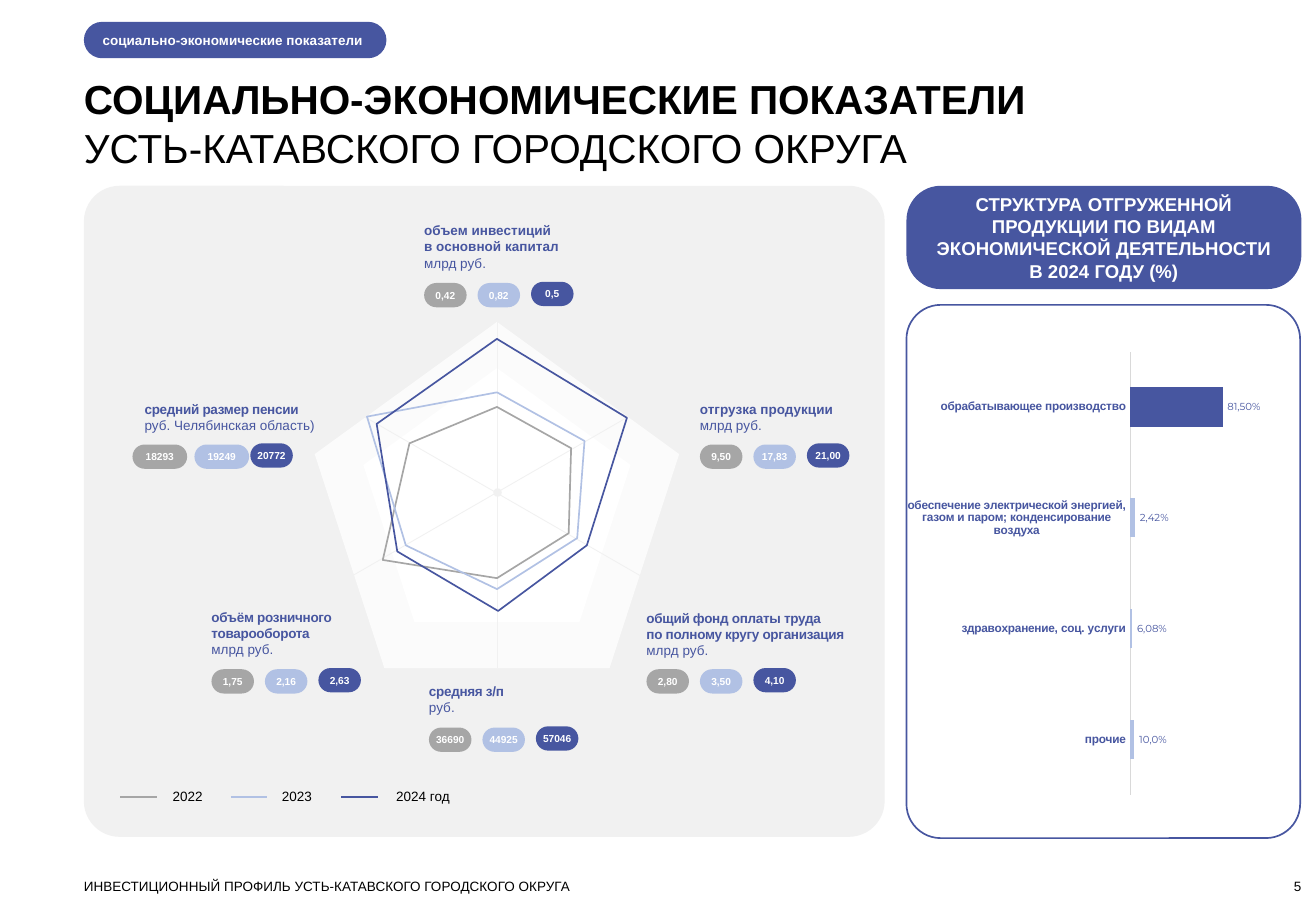
import pptx
import pptx.chart.data
import pptx.dml.color
import pptx.enum.chart
import pptx.enum.shapes
import pptx.enum.text
import pptx.oxml
import pptx.oxml.ns
import pptx.util

Inches = pptx.util.Inches
Pt = pptx.util.Pt
color = pptx.dml.color.RGBColor.from_string
Shapes = pptx.enum.shapes.MSO_SHAPE
Align = pptx.enum.text.PP_ALIGN
Anchor = pptx.enum.text.MSO_ANCHOR
qn = pptx.oxml.ns.qn

BLUE, LIGHT_BLUE, GRAY, PALE = "4756A0", "B1C1E4", "A6A6A6", "F1F1F1"
WHITE, BLACK = "FFFFFF", "000000"
YEAR_COLORS = (GRAY, LIGHT_BLUE, BLUE)

presentation = pptx.Presentation()
presentation.slide_width = Inches(10.83)
presentation.slide_height = Inches(7.5)
slide = presentation.slides.add_slide(presentation.slide_layouts[6])


def write_text(lines, size, hex_color, box=None, shape=None, align=Align.LEFT,
               anchor=Anchor.TOP, left_inset=0, tracking=0):
    """Write (text, bold) lines into a shape, or into a new text box at box."""
    if shape is None:
        shape = slide.shapes.add_textbox(*map(Inches, box))
    frame = shape.text_frame
    frame.word_wrap = True
    frame.vertical_anchor = anchor
    frame.margin_left = Inches(left_inset)
    frame.margin_right = frame.margin_top = frame.margin_bottom = 0
    for index, (text, bold) in enumerate(lines):
        paragraph = frame.add_paragraph() if index else frame.paragraphs[0]
        paragraph.alignment = align
        run = paragraph.add_run()
        run.text = text
        run.font.name = "Arial"
        run.font.size = Pt(size)
        run.font.bold = bold
        run.font.color.rgb = color(hex_color)
        if bold and tracking:
            run.font._element.set("spc", str(tracking))


def add_shape(kind, box, fill=None, line=None, corner=None):
    shape = slide.shapes.add_shape(kind, *map(Inches, box))
    shape.shadow.inherit = False
    if corner is not None:
        shape.adjustments[0] = corner
    if fill:
        shape.fill.solid()
        shape.fill.fore_color.rgb = color(fill)
    else:
        shape.fill.background()
    if line:
        shape.line.color.rgb = color(line)
        shape.line.width = Pt(1)
    else:
        shape.line.fill.background()
    return shape


# Header, title and footer
section_tag = add_shape(Shapes.ROUNDED_RECTANGLE, (0.69, 0.18, 2.49, 0.3), BLUE, corner=0.5)
write_text([("социально-экономические показатели", True)], 8, WHITE, shape=section_tag,
           anchor=Anchor.MIDDLE, left_inset=0.11)
write_text([("СОЦИАЛЬНО-ЭКОНОМИЧЕСКИЕ ПОКАЗАТЕЛИ", True),
            ("УСТЬ-КАТАВСКОГО ГОРОДСКОГО ОКРУГА", False)], 24, BLACK, (0.69, 0.61, 9.65, 0.81))
write_text([("ИНВЕСТИЦИОННЫЙ ПРОФИЛЬ УСТЬ-КАТАВСКОГО ГОРОДСКОГО ОКРУГА", False)],
           8, BLACK, (0.69, 7.23, 8, 0.13))
write_text([("5", False)], 8, BLACK, (9.91, 7.23, 0.8, 0.13),
           align=Align.RIGHT, anchor=Anchor.BOTTOM)

# Panels
add_shape(Shapes.ROUNDED_RECTANGLE, (0.69, 1.53, 6.59, 5.36), PALE, corner=0.055)
chart_title = add_shape(Shapes.ROUNDED_RECTANGLE, (7.46, 1.53, 3.25, 0.85), BLUE, corner=0.331)
title_lines = ("СТРУКТУРА ОТГРУЖЕННОЙ", "ПРОДУКЦИИ ПО ВИДАМ",
               "ЭКОНОМИЧЕСКОЙ ДЕЯТЕЛЬНОСТИ", "В 2024 ГОДУ (%)")
write_text([(text, True) for text in title_lines], 11, WHITE, shape=chart_title,
           align=Align.CENTER, anchor=Anchor.MIDDLE)
add_shape(Shapes.ROUNDED_RECTANGLE, (7.46, 2.51, 3.24, 4.39), line=BLUE, corner=0.087)

# Bar chart
chart_data = pptx.chart.data.CategoryChartData(number_format="0.00%")
chart_data.categories = [
    "прочие", "здравохранение, соц. услуги",
    "обеспечение электрической энергией, газом и паром; конденсирование воздуха",
    "обрабатывающее производство"]
chart_data.add_series("Series 1", (0.039, 0.018, 0.046, 0.897))
chart = slide.shapes.add_chart(
    pptx.enum.chart.XL_CHART_TYPE.BAR_CLUSTERED,
    Inches(7.46), Inches(2.5), Inches(3.24), Inches(4.4), chart_data).chart
chart.has_legend = False
chart.has_title = False
chart.font.name = "Calibri"
chart.font.size = Pt(10)
chart.font.color.rgb = color(BLACK)
value_axis = chart.value_axis
value_axis.minimum_scale, value_axis.maximum_scale = 0, 1
value_axis.has_major_gridlines = False
value_axis.visible = False
category_axis = chart.category_axis
category_axis.major_tick_mark = pptx.enum.chart.XL_TICK_MARK.NONE
category_axis.format.line.color.rgb = color("D9D9D9")
category_axis.format.line.width = Pt(0.75)
category_font = category_axis.tick_labels.font
category_font.name, category_font.size, category_font.bold = "Arial", Pt(7), True
category_font.color.rgb = color(BLUE)

plot = chart.plots[0]
plot.gap_width = 182
plot.vary_by_categories = False
series = plot.series[0]
series.format.fill.solid()
series.format.fill.fore_color.rgb = color(LIGHT_BLUE)
labels = series.data_labels
labels.show_value = True
labels.number_format = "0.00%"
labels.number_format_is_linked = False
labels.position = pptx.enum.chart.XL_LABEL_POSITION.OUTSIDE_END
labels.font.name, labels.font.size, labels.font.bold = "Montserrat", Pt(6), True
labels.font.color.rgb = color(BLUE)
for index, text in enumerate(("10,0%", "6,08%", "2,42%", "81,50%")):
    label = series.points[index].data_label
    run = label.text_frame.paragraphs[0].add_run()
    run.text = text
    run.font.name, run.font.size, run.font.bold = "Montserrat", Pt(6), False
    run.font.color.rgb = color(BLUE)
    label.position = pptx.enum.chart.XL_LABEL_POSITION.OUTSIDE_END
main_bar = series.points[3].format.fill
main_bar.solid()
main_bar.fore_color.rgb = color(BLUE)

plot_area = chart._chartSpace.chart.plotArea
for layout in plot_area.findall(qn("c:layout")):
    plot_area.remove(layout)
plot_area.insert(0, pptx.oxml.parse_xml(
    '<c:layout xmlns:c="http://schemas.openxmlformats.org/drawingml/2006/chart">'
    '<c:manualLayout><c:layoutTarget val="inner"/><c:xMode val="edge"/><c:yMode val="edge"/>'
    '<c:x val="0.569"/><c:y val="0.09"/><c:w val="0.261"/><c:h val="0.829"/>'
    '</c:manualLayout></c:layout>'))

# Radar background, spokes and legend
add_shape(Shapes.REGULAR_PENTAGON, (2.59, 2.65, 3, 2.85), "FBFBFB")
add_shape(Shapes.REGULAR_PENTAGON, (2.99, 3.03, 2.2, 2.09), WHITE)
lines = [((4.09, 2.65, 4.09, 5.5), PALE, 0.5),
         ((5.19, 3.42, 2.9, 4.74), PALE, 0.5),
         ((2.98, 3.42, 5.27, 4.74), PALE, 0.5)]
legend = (("2022", 0.99, 1.42), ("2023", 1.9, 2.32), ("2024 год", 2.81, 3.26))
for (year, line_left, text_left), year_color in zip(legend, YEAR_COLORS):
    lines.append(((line_left, 6.56, line_left + 0.3, 6.56), year_color, 1))
    write_text([(year, False)], 8, BLACK, (text_left, 6.49, 0.86, 0.13))
for ends, line_color, width in lines:
    connector = slide.shapes.add_connector(
        pptx.enum.shapes.MSO_CONNECTOR.STRAIGHT, *map(Inches, ends))
    connector.line.color.rgb = color(line_color)
    connector.line.width = Pt(width)
    properties = connector._element.spPr
    properties.append(properties.makeelement(qn("a:effectLst"), {}))
add_shape(Shapes.OVAL, (4.06, 4.02, 0.07, 0.07), PALE)

# Indicators: left, top, bold lines, unit, tracking, top of pills, values by year
indicators = (
    (3.49, 1.83, ("объем инвестиций", "в основной капитал"), "млрд руб.", 0,
     2.33, ("0,42", "0,82", "0,5")),
    (5.76, 3.3, ("отгрузка продукции",), "млрд руб.", 0, 3.66, ("9,50", "17,83", "21,00")),
    (5.32, 5.02, ("общий фонд оплаты труда", "по полному кругу организация"), "млрд руб.", -20,
     5.51, ("2,80", "3,50", "4,10")),
    (1.74, 5.01, ("объём розничного", "товарооборота"), "млрд руб.", -20,
     5.51, ("1,75", "2,16", "2,63")),
    (1.19, 3.3, ("средний размер пенсии",), "руб. Челябинская область)", -20,
     3.66, ("18293", "19249", "20772")),
    (3.53, 5.62, ("средняя з/п",), "руб.", -20, 5.99, ("36690", "44925", "57046")),
)
PENSION_PILLS = ((1.09, 0.45), (1.6, 0.45), (2.06, 0.35))
for left, top, names, unit, tracking, pill_top, values in indicators:
    write_text([(name, True) for name in names] + [(unit, False)], 8, BLUE,
               (left, top, 1.71, 0.13 * (len(names) + 1)), tracking=tracking)
    pills = [(left + 0.44 * year, 0.35) for year in range(3)]
    if names[0] == "средний размер пенсии":
        pills = PENSION_PILLS
    for (pill_left, width), value, year_color in zip(pills, values, YEAR_COLORS):
        raised = 0.01 if year_color == BLUE else 0
        pill = add_shape(Shapes.ROUNDED_RECTANGLE, (pill_left, pill_top - raised, width, 0.2),
                         year_color, corner=0.5)
        write_text([(value, True)], 6, WHITE, shape=pill,
                   align=Align.CENTER, anchor=Anchor.MIDDLE)

# Radar outlines by year
outlines = (
    ((3.37, 3.65), (4.09, 3.35), (4.7, 3.69), (4.68, 4.39), (4.09, 4.76), (3.15, 4.61)),
    ((3.02, 3.43), (4.09, 3.23), (4.81, 3.63), (4.75, 4.43), (4.09, 4.85), (3.34, 4.49)),
    ((3.1, 3.49), (4.09, 2.79), (5.16, 3.44), (4.83, 4.49), (4.1, 5.03), (3.27, 4.54)),
)
for points, year_color in zip(outlines, YEAR_COLORS):
    corners = [(Inches(x), Inches(y)) for x, y in points]
    builder = slide.shapes.build_freeform(*corners[0])
    builder.add_line_segments(corners[1:], close=True)
    outline = builder.convert_to_shape()
    outline.shadow.inherit = False
    outline.fill.background()
    outline.line.color.rgb = color(year_color)
    outline.line.width = Pt(1)

presentation.save("out.pptx")
